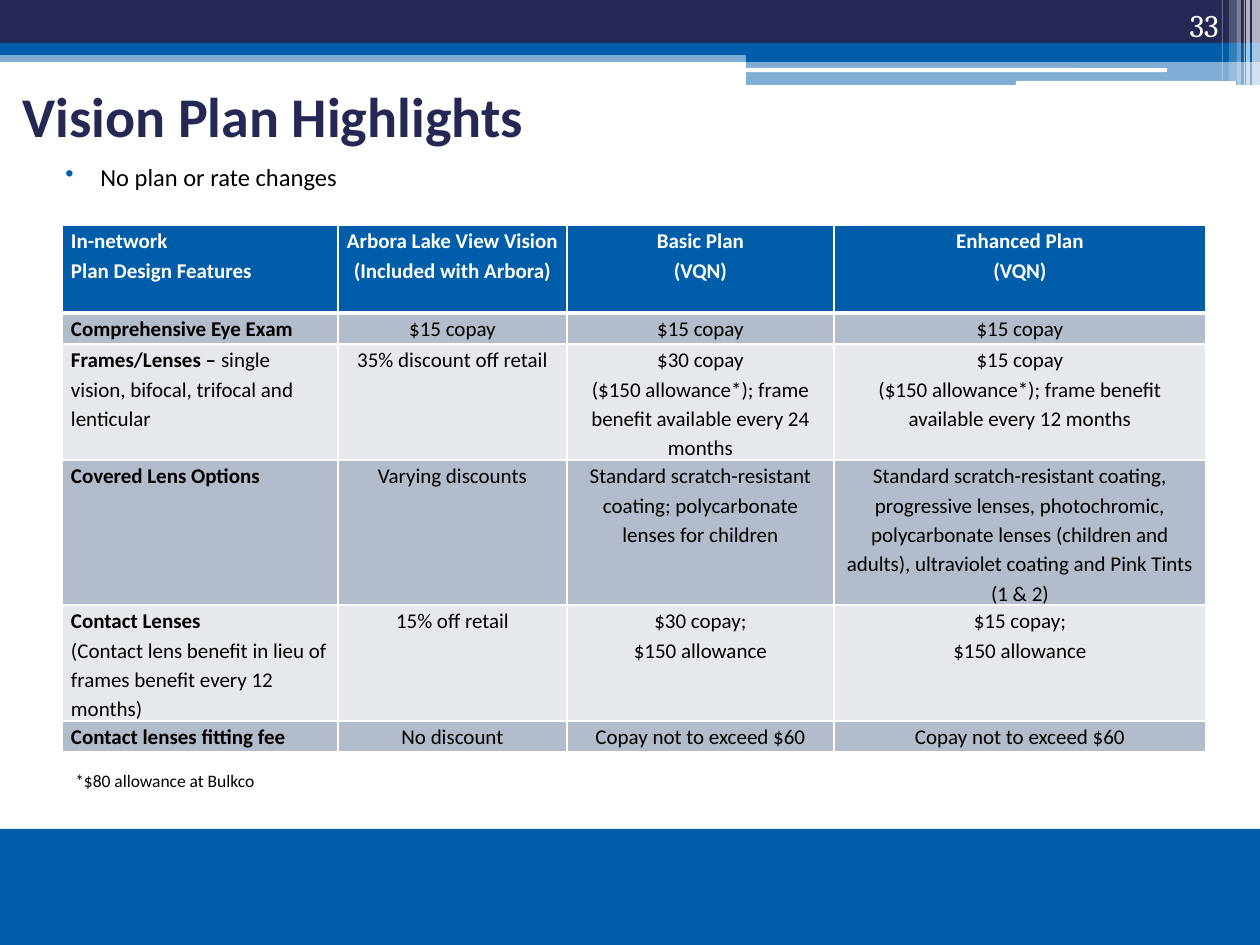
from collections import namedtuple

from lxml.etree import SubElement
from pptx import Presentation
from pptx.dml.color import RGBColor
from pptx.enum.shapes import MSO_SHAPE
from pptx.enum.text import MSO_ANCHOR, PP_ALIGN
from pptx.oxml.ns import qn
from pptx.util import Emu, Pt

Box = namedtuple("Box", "left top width height")

NAVY, BLUE, WHITE, BLACK = "242852", "005DAA", "FFFFFF", "000000"
DARK_BAND, LIGHT_BAND = "B2BCCB", "E5E9EE"

HEADER_BARS = [
    (0, 50, 1260, 12, BLUE, 50),
    (0, 0, 1260, 43, NAVY, 100),
    (0, 43, 1260, 12, BLUE, 100),
    (746, 49, 514, 13, BLUE, 100),
    (746, 61, 514, 24, BLUE, 50),
]
HEADER_SLOTS = [(745, 68, 422, 4), (1016, 81, 220, 5)]
HEADER_STRIPES = [
    (1252, 8, 85, 65),
    (1246, 4, 85, 65),
    (1244, 1, 85, 60),
    (1237, 4, 85, 40),
    (1229, 8, 81, 20),
    (1222, 1, 81, 30),
]

COLUMN_WIDTHS = [276, 229, 267, 372]
ROW_HEIGHTS = [88, 31, 116, 145, 115, 31]
PLAN_ROWS = [
    [[[("In-network", True)], [("Plan Design Features", True)]],
     "Arbora Lake View Vision\n(Included with Arbora)",
     "Basic Plan\n(VQN)",
     "Enhanced Plan\n(VQN)"],
    [[[("Comprehensive Eye Exam", True)]],
     "$15 copay", "$15 copay", "$15 copay"],
    [[[("Frames/Lenses – ", True),
       ("single vision, bifocal, trifocal and lenticular", False)]],
     "35% discount off retail",
     "$30 copay\n($150 allowance*); frame benefit available every 24 months",
     "$15 copay\n($150 allowance*); frame benefit available every 12 months"],
    [[[("Covered Lens Options", True)]],
     "Varying discounts",
     "Standard scratch-resistant coating; polycarbonate lenses for children",
     "Standard scratch-resistant coating, progressive lenses, photochromic, "
     "polycarbonate lenses (children and adults), ultraviolet coating and "
     "Pink Tints (1 & 2)"],
    [[[("Contact Lenses", True)],
      [("(Contact lens benefit in lieu of frames benefit every 12 months)", False)]],
     "15% off retail",
     "$30 copay;\n$150 allowance",
     "$15 copay;\n$150 allowance"],
    [[[("Contact lenses fitting fee", True)]],
     "No discount", "Copay not to exceed $60", "Copay not to exceed $60"],
]


def px(length):
    return Emu(round(length * 914400 / 126))


def rgb(color):
    return RGBColor.from_string(color)


def apply(target, values):
    for name, value in values.items():
        setattr(target, name, value)


def style_font(font, size, color, bold=False, name="Calibri"):
    apply(font, {"size": Pt(size), "bold": bold, "name": name})
    font.color.rgb = rgb(color)


def add_bar(slide, box, color, opacity=100, kind=MSO_SHAPE.RECTANGLE):
    bar = slide.shapes.add_shape(kind, *map(px, box))
    bar.shadow.inherit = False
    bar.fill.solid()
    bar.fill.fore_color.rgb = rgb(color)
    bar.line.fill.background()
    if opacity < 100:
        tone = bar.fill._xPr.find(qn("a:solidFill"))[0]
        SubElement(tone, qn("a:alpha"), val=str(opacity * 1000))


def add_label(slide, box, text, size, color, anchor=MSO_ANCHOR.TOP,
              align=PP_ALIGN.LEFT, bullet=None, **font):
    frame = slide.shapes.add_textbox(*map(px, box)).text_frame
    apply(frame, {"word_wrap": True, "vertical_anchor": anchor})
    line = frame.paragraphs[0]
    line.alignment = align
    if bullet:
        properties = line._p.get_or_add_pPr()
        apply_indent = {"marL": px(50), "indent": px(-35)}
        for name, value in apply_indent.items():
            properties.set(name, str(value))
        SubElement(SubElement(properties, qn("a:buClr")), qn("a:srgbClr"), val=BLUE)
        SubElement(properties, qn("a:buChar"), char=bullet)
    run = line.add_run()
    run.text = text
    style_font(run.font, size, color, **font)


def add_header(slide, box):
    def place(left, top, width, height):
        return Box(box.left + left, box.top + top, width, height)

    for *spot, color, opacity in HEADER_BARS:
        add_bar(slide, place(*spot), color, opacity)
    for slot in HEADER_SLOTS:
        add_bar(slide, place(*slot), WHITE, kind=MSO_SHAPE.ROUNDED_RECTANGLE)
    for left, width, height, opacity in HEADER_STRIPES:
        add_bar(slide, place(left, 0, width, height), WHITE, opacity)
    add_label(slide, place(1126, 0, 105, 50), "33", 18, WHITE,
              MSO_ANCHOR.BOTTOM, PP_ALIGN.RIGHT, name="Cambria")


def add_intro(slide, box):
    add_label(slide, Box(box.left + 10, box.top, 1087, 147),
              "Vision Plan Highlights", 32, NAVY, MSO_ANCHOR.MIDDLE, bold=True)
    add_label(slide, Box(box.left + 38, box.top + 114, 1159, 60),
              "No plan or rate changes", 14, BLACK, bullet="•")


def add_borders(cell, widths):
    properties = cell._tc.get_or_add_tcPr()
    for side, width in zip("LRTB", widths):
        edge = SubElement(properties, qn(f"a:ln{side}"), w=str(Pt(width)))
        SubElement(SubElement(edge, qn("a:solidFill")), qn("a:srgbClr"), val=WHITE)


def fill_cell(cell, content, row, align):
    if isinstance(content, str):
        content = [[(text, row == 0)] for text in content.split("\n")]
    apply(cell, {"margin_left": px(9), "margin_right": px(9),
                 "margin_top": 0, "margin_bottom": 0})
    add_borders(cell, (1, 1, 3 if row == 1 else 1, 3 if row == 0 else 1))
    cell.fill.solid()
    band = DARK_BAND if row % 2 else LIGHT_BAND
    cell.fill.fore_color.rgb = rgb(band if row else BLUE)
    frame = cell.text_frame
    for index, runs in enumerate(content):
        line = frame.add_paragraph() if index else frame.paragraphs[0]
        apply(line, {"alignment": align, "line_spacing": 1.15})
        for text, bold in runs:
            run = line.add_run()
            run.text = text
            style_font(run.font, 12, BLACK if row else WHITE, bold)


def add_plan_table(slide, box):
    table = slide.shapes.add_table(
        len(ROW_HEIGHTS), len(COLUMN_WIDTHS), *map(px, box)).table
    for column, width in zip(table.columns, COLUMN_WIDTHS):
        column.width = px(width)
    for row, (height, contents) in enumerate(zip(ROW_HEIGHTS, PLAN_ROWS)):
        table.rows[row].height = px(height)
        for column, content in enumerate(contents):
            align = PP_ALIGN.CENTER if column else PP_ALIGN.LEFT
            fill_cell(table.cell(row, column), content, row, align)


def add_footer(slide, box):
    add_label(slide, Box(box.left + 63, box.top, 325, 34),
              "*$80 allowance at Bulkco", 10, BLACK)
    add_bar(slide, Box(box.left, box.top + 65, box.width, box.height - 65), BLUE)


def main():
    deck = Presentation()
    apply(deck, {"slide_width": px(1260), "slide_height": px(945)})
    slide = deck.slides.add_slide(deck.slide_layouts[6])
    add_header(slide, Box(0, 0, 1260, 86))
    add_intro(slide, Box(0, 42, 1260, 174))
    add_plan_table(slide, Box(62, 225, sum(COLUMN_WIDTHS), sum(ROW_HEIGHTS)))
    add_footer(slide, Box(0, 764, 1260, 181))
    deck.save("out.pptx")


if __name__ == "__main__":
    main()
